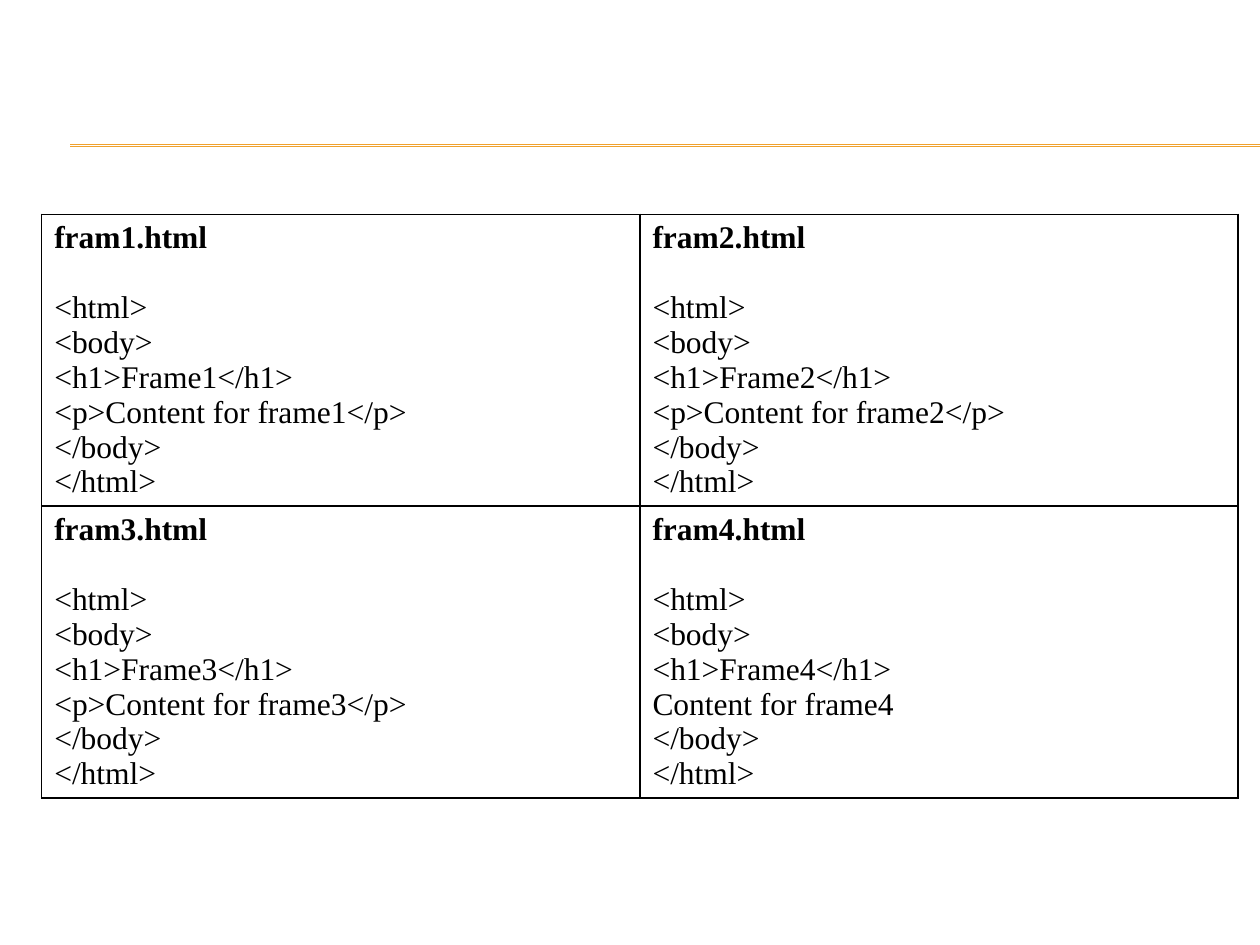
from lxml.etree import SubElement
from pptx import Presentation
from pptx.dml.color import RGBColor
from pptx.enum.shapes import MSO_CONNECTOR
from pptx.oxml.ns import qn
from pptx.util import Cm, Pt

FONT = "Times New Roman"
BLACK, ORANGE = "000000", "F0A22E"
WIDTH, HEIGHT = 25.4, 19.05
RULE_LEFT, RULE_TOPS = 1.42, (2.92, 2.95)
LEFT, TOP, COL_W, ROW_H = 0.84, 4.32, 12.06, 5.88

PAGES = [
    [("fram1.html", "Frame1", "<p>Content for frame1</p>"),
     ("fram2.html", "Frame2", "<p>Content for frame2</p>")],
    [("fram3.html", "Frame3", "<p>Content for frame3</p>"),
     ("fram4.html", "Frame4", "Content for frame4")],
]


def color(value):
    return RGBColor.from_string(value)


def add_text(p, text, size=18, bold=False, after=0):
    p.space_after = Pt(after)
    r = p.add_run()
    r.text = text
    r.font.name = FONT
    r.font.size = Pt(size)
    r.font.bold = bold
    r.font.color.rgb = color(BLACK)


def add_rule(s, top):
    line = s.shapes.add_connector(
        MSO_CONNECTOR.STRAIGHT, Cm(RULE_LEFT), Cm(top), Cm(WIDTH), Cm(top))
    line.line.color.rgb = color(ORANGE)
    line.line.width = Pt(0.75)
    SubElement(line._element.spPr, qn("a:effectLst"))


def add_borders(cell):
    tc_pr = cell._tc.get_or_add_tcPr()
    for side in ("a:lnL", "a:lnR", "a:lnT", "a:lnB"):
        ln = SubElement(tc_pr, qn(side), w=str(Pt(1)))
        fill = SubElement(ln, qn("a:solidFill"))
        SubElement(fill, qn("a:srgbClr"), val=BLACK)


def fill_cell(cell, name, heading, content):
    add_borders(cell)
    cell.fill.background()
    tf = cell.text_frame
    add_text(tf.paragraphs[0], name, bold=True, after=20)
    for text in ("<html>", "<body>", f"<h1>{heading}</h1>", content,
                 "</body>", "</html>"):
        add_text(tf.add_paragraph(), text)


def main():
    prs = Presentation()
    prs.slide_width, prs.slide_height = Cm(WIDTH), Cm(HEIGHT)
    s = prs.slides.add_slide(prs.slide_layouts[6])
    for top in RULE_TOPS:
        add_rule(s, top)
    rows, cols = len(PAGES), len(PAGES[0])
    table = s.shapes.add_table(rows, cols, Cm(LEFT), Cm(TOP),
                               Cm(COL_W * cols), Cm(ROW_H * rows)).table
    table.first_row = table.horz_banding = False
    for i, row in enumerate(PAGES):
        for j, page in enumerate(row):
            fill_cell(table.cell(i, j), *page)
    prs.save("out.pptx")


if __name__ == "__main__":
    main()
